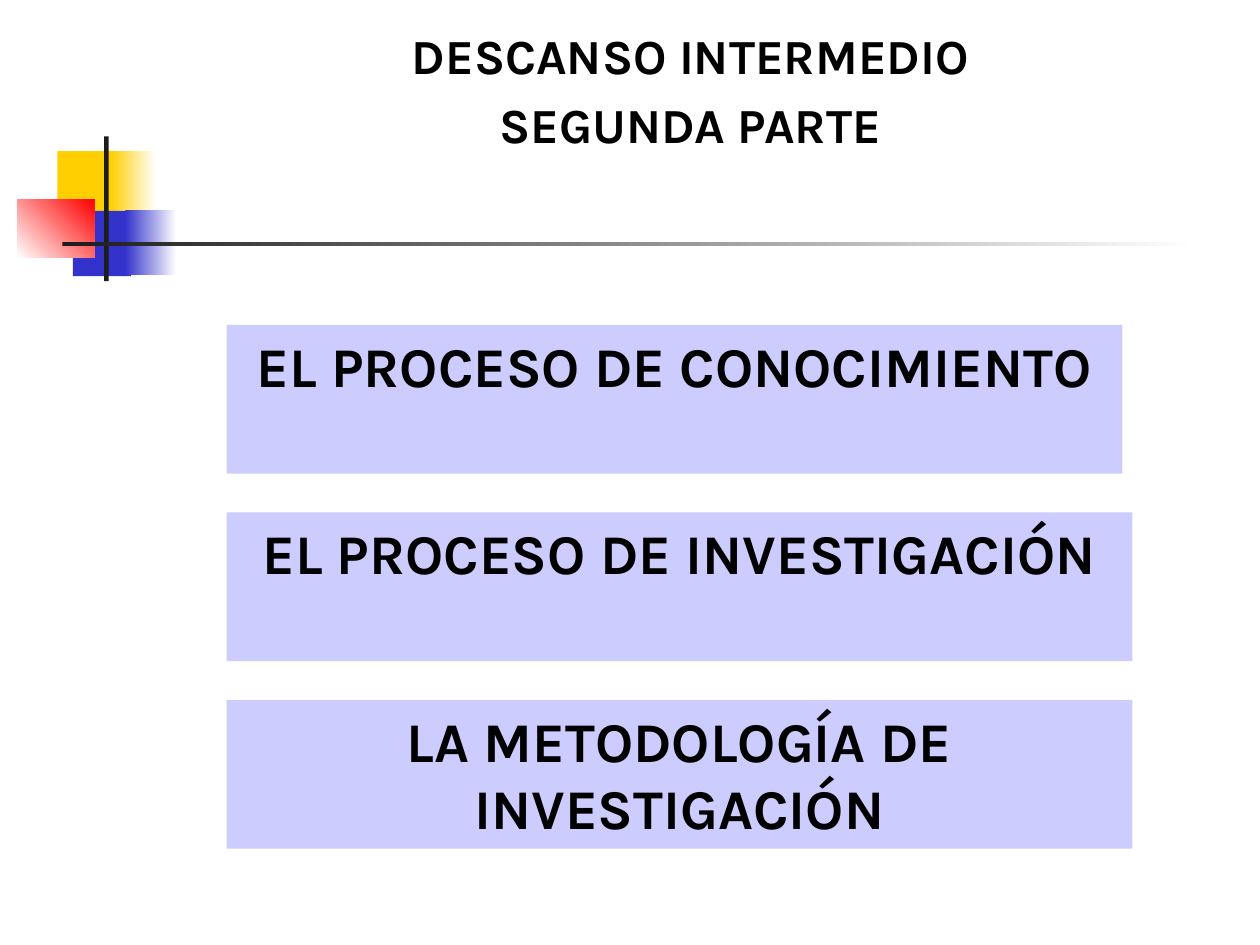
from pptx import Presentation
from pptx.dml.color import RGBColor
from pptx.enum.shapes import MSO_SHAPE
from pptx.enum.text import MSO_ANCHOR, PP_ALIGN
from pptx.util import Cm, Pt

RECTANGLE = MSO_SHAPE.RECTANGLE
TOP = MSO_ANCHOR.TOP
CENTER = PP_ALIGN.CENTER

WHITE = RGBColor(0xFF, 0xFF, 0xFF)
BLACK = RGBColor(0x00, 0x00, 0x00)
CHARCOAL = RGBColor(0x1C, 0x1C, 0x1C)
YELLOW = RGBColor(0xFF, 0xCF, 0x01)
BLUE = RGBColor(0x33, 0x33, 0xCC)
RED = RGBColor(0xFF, 0x00, 0x00)
LAVENDER = RGBColor(0xCC, 0xCC, 0xFF)

FONT = "Karla"


def add_block(slide, left, top, width, height, start, end=None, angle=0):
    """Add a borderless rectangle, solid or fading from start to end."""
    block = slide.shapes.add_shape(
        RECTANGLE, Cm(left), Cm(top), Cm(width), Cm(height))
    block.shadow.inherit = False
    block.line.fill.background()
    if end is None:
        block.fill.solid()
        block.fill.fore_color.rgb = start
    else:
        block.fill.gradient()
        block.fill.gradient_angle = angle
        for stop, color in zip(block.fill.gradient_stops, (start, end)):
            stop.color.rgb = color
    return block


def write_lines(frame, lines, size, gap=0):
    frame.word_wrap = True
    frame.vertical_anchor = TOP
    for index, line in enumerate(lines):
        paragraph = frame.paragraphs[0] if index == 0 else frame.add_paragraph()
        paragraph.alignment = CENTER
        paragraph.space_before = Pt(gap if index else 0)
        run = paragraph.add_run()
        run.text = line
        run.font.name = FONT
        run.font.size = Pt(size)
        run.font.bold = True
        run.font.color.rgb = BLACK


def add_emblem(slide, left, top):
    """Add the coloured squares with the crossing rules."""
    parts = [
        (0.81, 0.3, 1.22, 1.32, YELLOW),
        (1.88, 0.3, 0.91, 1.32, YELLOW, WHITE),
        (1.12, 1.5, 1.17, 1.32, BLUE),
        (2.18, 1.48, 1.02, 1.32, BLUE, WHITE),
        (0, 1.27, 1.55, 1.17, WHITE, RED, 45),
        (1.75, 0, 0.09, 2.92, CHARCOAL),
        (0.91, 2.12, 22.86, 0.09, CHARCOAL, WHITE),
    ]
    for x, y, width, height, *paint in parts:
        add_block(slide, left + x, top + y, width, height, *paint)


def add_title(slide, left, top, width, height):
    title = slide.shapes.add_textbox(Cm(left), Cm(top), Cm(width), Cm(height))
    write_lines(title.text_frame,
                ["DESCANSO INTERMEDIO", "SEGUNDA PARTE"], 28, gap=6)


def add_topics(slide, left, top, height, pitch):
    topics = [
        ("EL PROCESO DE CONOCIMIENTO", 18.06),
        ("EL PROCESO DE INVESTIGACIÓN", 18.26),
        ("LA METODOLOGÍA DE INVESTIGACIÓN", 18.26),
    ]
    for index, (topic, width) in enumerate(topics):
        panel = add_block(slide, left, top + index * pitch, width, height,
                          LAVENDER)
        write_lines(panel.text_frame, [topic], 32)


def main():
    deck = Presentation()
    deck.slide_width, deck.slide_height = Cm(25.4), Cm(19.05)
    slide = deck.slides.add_slide(deck.slide_layouts[6])
    add_emblem(slide, 0.35, 2.75)
    add_title(slide, 3.3, 0.38, 21.23, 2.87)
    add_topics(slide, 4.57, 6.55, height=3, pitch=3.78)
    deck.save("out.pptx")


if __name__ == "__main__":
    main()
